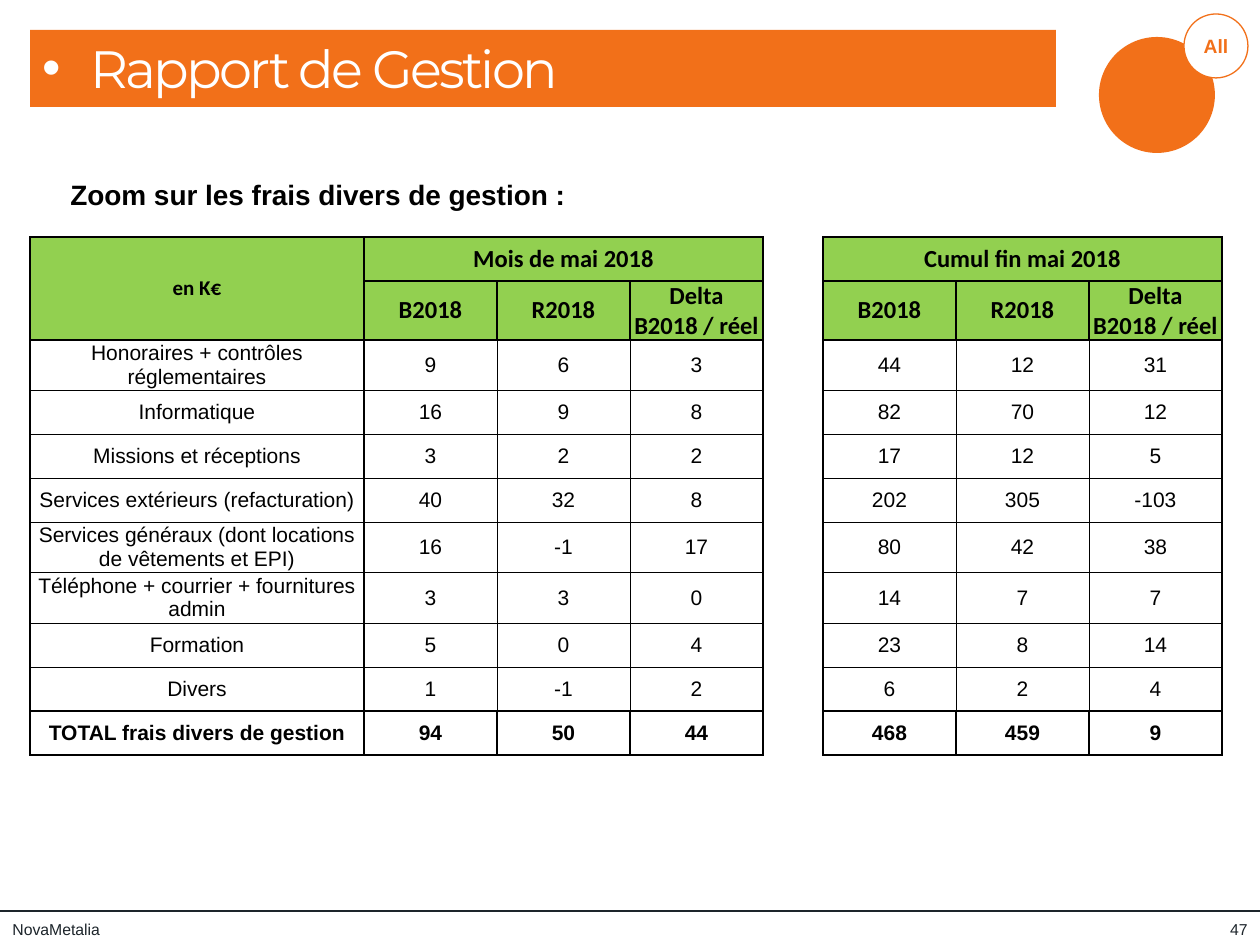
from pptx import Presentation
from pptx.dml.color import RGBColor
from pptx.enum.shapes import MSO_CONNECTOR, MSO_SHAPE
from pptx.enum.text import MSO_ANCHOR, MSO_AUTO_SIZE, PP_ALIGN
from pptx.oxml.ns import qn
from pptx.util import Emu, Pt
from lxml import etree

RECT, OVAL = MSO_SHAPE.RECTANGLE, MSO_SHAPE.OVAL
STRAIGHT = MSO_CONNECTOR.STRAIGHT
LEFT, CENTER, RIGHT = PP_ALIGN.LEFT, PP_ALIGN.CENTER, PP_ALIGN.RIGHT
TOP, MIDDLE = MSO_ANCHOR.TOP, MSO_ANCHOR.MIDDLE
GROW, FIXED = MSO_AUTO_SIZE.SHAPE_TO_FIT_TEXT, MSO_AUTO_SIZE.NONE

COLORS = {"orange": "F27019", "green": "92D050", "ink": "1D252B",
          "black": "000000", "white": "FFFFFF"}

GAP = 4
THICK, THIN = 1, 0.5
COLUMNS = [334, 133, 133, 133, 60, 133, 133, 133]
ROW_HEIGHT = 44
MEASURES = ["B2018", "R2018", "Delta B2018 / réel"]
HEADERS = [
    ["en K€", "Mois de mai 2018", "", "", "", "Cumul fin mai 2018", "", ""],
    ["", *MEASURES, "", *MEASURES],
]
EXPENSES = [
    ("Honoraires + contrôles réglementaires", (9, 6, 3), (44, 12, 31)),
    ("Informatique", (16, 9, 8), (82, 70, 12)),
    ("Missions et réceptions", (3, 2, 2), (17, 12, 5)),
    ("Services extérieurs (refacturation)", (40, 32, 8), (202, 305, -103)),
    ("Services généraux (dont locations de vêtements et EPI)", (16, -1, 17), (80, 42, 38)),
    ("Téléphone + courrier + fournitures admin", (3, 3, 0), (14, 7, 7)),
    ("Formation", (5, 0, 4), (23, 8, 14)),
    ("Divers", (1, -1, 2), (6, 2, 4)),
    ("TOTAL frais divers de gestion", (94, 50, 44), (468, 459, 9)),
]
MERGES = [((0, 0), (1, 0)), ((0, 1), (0, 3)), ((0, 5), (0, 7))]


def px(n):
    return Emu(round(n * 914400 / 126))


def rgb(name):
    return RGBColor.from_string(COLORS[name])


class Deck:
    """Builds slide elements in one style, with lengths in px."""

    def __init__(self, width, height):
        self.prs = Presentation()
        self.prs.slide_width, self.prs.slide_height = px(width), px(height)
        self.s = self.prs.slides.add_slide(self.prs.slide_layouts[6])

    def run(self, p, text, size, color="black", bold=False, font="Arial", spacing=None):
        r = p.add_run()
        r.text = text
        r.font.size, r.font.bold, r.font.name = Pt(size), bold, font
        r.font.color.rgb = rgb(color)
        if spacing is not None:
            r.font._element.set("spc", str(round(spacing * 100)))

    def frame(self, sp, text, size, color, align=LEFT, anchor=MIDDLE, wrap=True,
              grow=False, **style):
        tf = sp.text_frame
        tf.word_wrap, tf.vertical_anchor = wrap, anchor
        tf.auto_size = GROW if grow else FIXED
        p = tf.paragraphs[0]
        p.alignment = align
        self.run(p, text, size, color, **style)
        return tf

    def shape(self, kind, box, fill, line=None):
        sp = self.s.shapes.add_shape(kind, *map(px, box))
        sp.shadow.inherit = False
        sp.fill.solid()
        sp.fill.fore_color.rgb = rgb(fill)
        if line:
            sp.line.color.rgb = rgb(line)
            sp.line.width = Pt(0.75)
        else:
            sp.line.fill.background()
        return sp

    def text(self, box, text, size, color, **style):
        sp = self.s.shapes.add_textbox(*map(px, box))
        return self.frame(sp, text, size, color, **style)

    def title(self, box, text):
        sp = self.shape(RECT, box, "orange")
        tf = self.frame(sp, text, 30, "white", anchor=TOP, grow=True,
                        font="Montserrat", spacing=-1.5)
        pPr = tf.paragraphs[0]._p.get_or_add_pPr()
        pPr.set("marL", str(px(48)))
        pPr.set("indent", str(-px(48)))
        etree.SubElement(pPr, qn("a:buFont")).set("typeface", "Arial")
        etree.SubElement(pPr, qn("a:buChar")).set("char", "•")

    def badge(self, box, text):
        sp = self.shape(OVAL, box, "white", "orange")
        tf = self.frame(sp, text, 11, "orange", align=CENTER, bold=True)
        tf.margin_left = tf.margin_right = 0

    def line(self, x1, y1, x2, y2):
        cx = self.s.shapes.add_connector(STRAIGHT, *map(px, (x1, y1, x2, y2)))
        cx.line.color.rgb = rgb("ink")
        cx.line.width = Pt(1.5)
        etree.SubElement(cx._element.spPr, qn("a:effectLst"))

    def borders(self, cell, widths):
        tcPr = cell._tc.get_or_add_tcPr()
        for side, width in zip("LRTB", widths):
            ln = etree.SubElement(tcPr, qn(f"a:ln{side}"), w=str(Pt(width)))
            if width:
                fill = etree.SubElement(ln, qn("a:solidFill"))
                etree.SubElement(fill, qn("a:srgbClr"), val=COLORS["black"])
            else:
                etree.SubElement(ln, qn("a:noFill"))

    def cell(self, cell, text, fill, widths, **style):
        self.borders(cell, widths)
        cell.fill.solid()
        cell.fill.fore_color.rgb = rgb(fill)
        cell.margin_left = cell.margin_right = cell.margin_top = cell.margin_bottom = 0
        cell.vertical_anchor = MIDDLE
        if text:
            p = cell.text_frame.paragraphs[0]
            p.alignment = CENTER
            self.run(p, text, **style)

    def table(self, x, y, rows):
        box = (x, y, sum(COLUMNS), ROW_HEIGHT * len(rows))
        tbl = self.s.shapes.add_table(len(rows), len(COLUMNS), *map(px, box)).table
        tbl.first_row = tbl.horz_banding = False
        for column, width in zip(tbl.columns, COLUMNS):
            column.width = px(width)
        last = len(rows) - 1
        for i, row in enumerate(rows):
            tbl.rows[i].height = px(ROW_HEIGHT)
            header, total = i < len(HEADERS), i == last
            for j, text in enumerate(row):
                if j == GAP:
                    widths = (THICK, THICK, 0, 0)
                else:
                    edges = (j in (0, 1, GAP + 1), j in (0, GAP - 1, len(row) - 1),
                             i == len(HEADERS), i == last - 1)
                    widths = [THICK if header or total or edge else THIN for edge in edges]
                self.cell(tbl.cell(i, j), text,
                          "green" if header and j != GAP else "white", widths,
                          size=14 if header and j else 12, bold=header or total,
                          font="Calibri" if header else "Arial")
        for start, end in MERGES:
            tbl.cell(*start).merge(tbl.cell(*end))


def main():
    d = Deck(1260, 945)
    d.line(0, 911, 1260, 911)
    d.shape(OVAL, (1099, 37, 116, 116), "orange")
    d.badge((1184, 14, 64, 64), "All")
    d.text((0, 914, 433, 31), "NovaMetalia", 9, "ink")
    d.text((1198, 914, 62, 31), "47", 9, "ink", align=RIGHT)
    d.title((30, 30, 1026, 77), "Rapport de Gestion")
    d.text((58, 171, 527, 47), "Zoom sur les frais divers de gestion :", 16, "black",
           anchor=TOP, wrap=False, grow=True, bold=True)
    body = [[label, *map(str, month), "", *map(str, total)]
            for label, month, total in EXPENSES]
    d.table(30, 237, HEADERS + body)
    d.prs.save("out.pptx")


if __name__ == "__main__":
    main()
